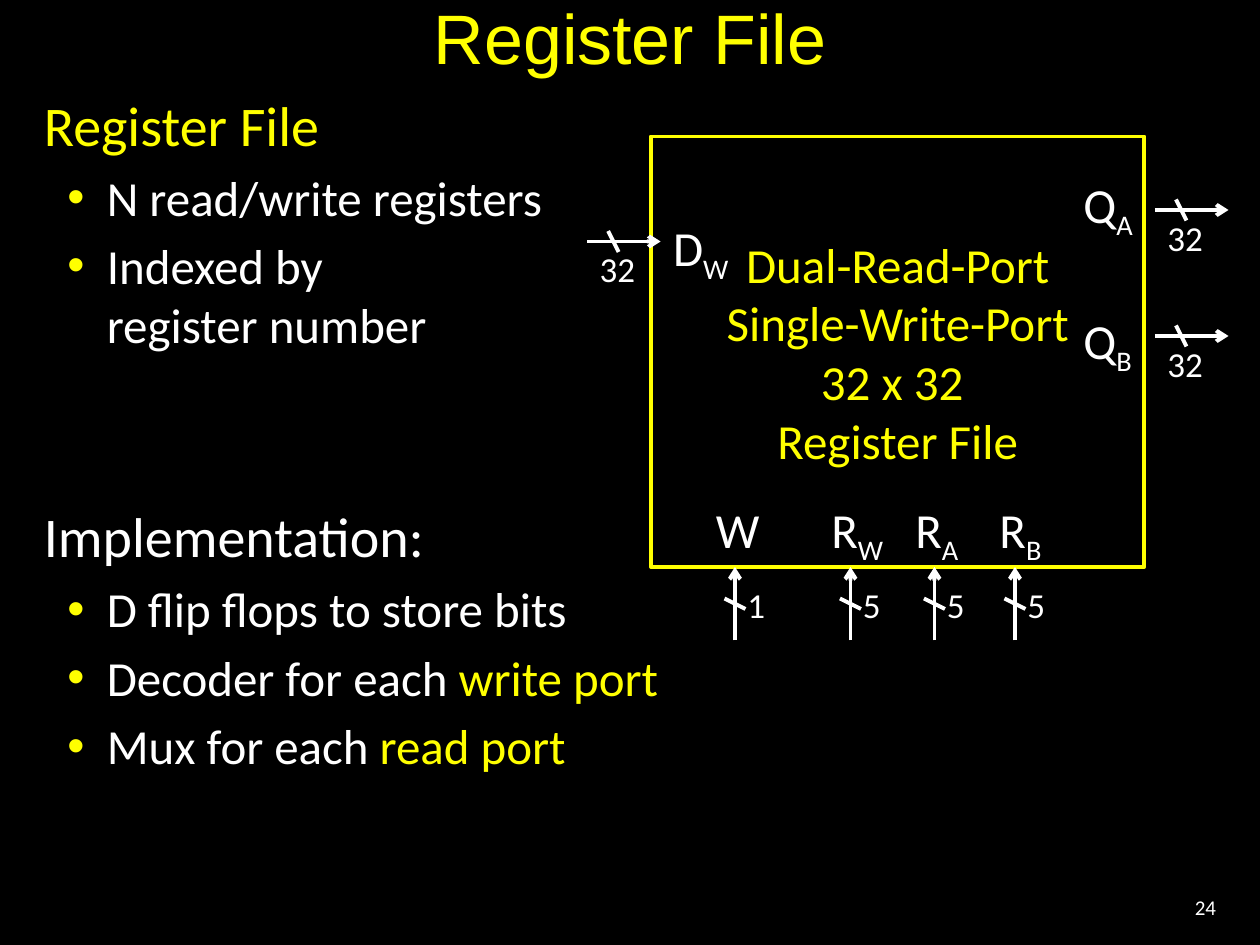
import pptx
import pptx.util
import pptx.dml.color
import pptx.enum.shapes
import pptx.enum.text
import pptx.oxml.ns
import lxml.etree

Pt = pptx.util.Pt
Align = pptx.enum.text.PP_ALIGN
Anchor = pptx.enum.text.MSO_ANCHOR
qn = pptx.oxml.ns.qn
YELLOW, WHITE, BLACK = "FFFF00", "FFFFFF", "000000"


def color(code):
    return pptx.dml.color.RGBColor.from_string(code)


def write(para, text, font="Calibri", size=28, fill=WHITE, base=0):
    for i, part in enumerate(text.split("\n")):
        if i:
            para.add_line_break()
        run = para.add_run()
        run.text = part
        run.font.name = font
        run.font.size = Pt(size)
        run.font.color.rgb = color(fill)
        if base:
            run.font._element.set("baseline", str(base * 1000))


def frame(slide, box, wrap=True, anchor=Anchor.TOP, align=Align.LEFT):
    area = slide.shapes.add_textbox(*map(Pt, box)).text_frame
    area.word_wrap = wrap
    area.vertical_anchor = anchor
    area.paragraphs[0].alignment = align
    return area


def bullet(para):
    props = para._p.get_or_add_pPr()
    props.set("marL", str(Pt(36)))
    props.set("indent", str(Pt(-22.5)))
    tint = lxml.etree.SubElement(props, qn("a:buClr"))
    lxml.etree.SubElement(tint, qn("a:srgbClr")).set("val", YELLOW)
    lxml.etree.SubElement(props, qn("a:buFont")).set("typeface", "Arial")
    lxml.etree.SubElement(props, qn("a:buChar")).set("char", "•")


def line(slide, x1, y1, x2, y2, arrow=False):
    kind = pptx.enum.shapes.MSO_CONNECTOR.STRAIGHT
    wire = slide.shapes.add_connector(kind, Pt(x1), Pt(y1), Pt(x2), Pt(y2))
    wire.line.color.rgb = color(WHITE)
    wire.line.width = Pt(2.25)
    if arrow:
        stroke = wire.line._get_or_add_ln()
        lxml.etree.SubElement(stroke, qn("a:tailEnd")).set("type", "arrow")
    lxml.etree.SubElement(wire._element.spPr, qn("a:effectLst"))


def title(slide, box):
    area = frame(slide, box, anchor=Anchor.MIDDLE, align=Align.CENTER)
    write(area.paragraphs[0], "Register File", font="Arial", size=40, fill=YELLOW)


def number(slide, box):
    area = frame(slide, box, anchor=Anchor.MIDDLE, align=Align.RIGHT)
    write(area.paragraphs[0], "24", size=12)


def notes(slide, box):
    area = frame(slide, box)
    groups = [
        ("Register File", YELLOW, 0,
         [("N read/write registers", ""), ("Indexed by \nregister number", "")]),
        ("Implementation:", WHITE, 85,
         [("D flip flops to store bits", ""),
          ("Decoder for each ", "write port"),
          ("Mux for each", " read port")]),
    ]
    for i, (head, fill, gap, items) in enumerate(groups):
        para = area.add_paragraph() if i else area.paragraphs[0]
        para.space_before = Pt(gap)
        write(para, head, size=32, fill=fill)
        for plain, key in items:
            para = area.add_paragraph()
            para.space_before = Pt(5.5)
            bullet(para)
            write(para, plain)
            if key:
                write(para, key, fill=YELLOW)


def label(slide, x, y, name, sub="", size=28):
    area = frame(slide, (x, y, 48, size * 1.5), wrap=False)
    write(area.paragraphs[0], name, size=size)
    if sub:
        write(area.paragraphs[0], sub, size=size, base=-25)


def across(slide, x, y):
    line(slide, x, y, x + 42, y, arrow=True)
    line(slide, x + 12, y - 6, x + 18, y + 6)
    label(slide, x, y, "32", size=20)


def upward(slide, x, y, bits):
    line(slide, x, y + 42, x, y, arrow=True)
    line(slide, x - 6, y + 18, x + 6, y + 24)
    label(slide, x, y + 6, bits, size=20)


def block(slide, box):
    left, top, width, height = box
    kind = pptx.enum.shapes.MSO_SHAPE.RECTANGLE
    body = slide.shapes.add_shape(kind, *map(Pt, box))
    body.shadow.inherit = False
    body.fill.background()
    body.line.color.rgb = color(YELLOW)
    body.line.width = Pt(2.25)
    area = body.text_frame
    area.word_wrap = True
    area.vertical_anchor = Anchor.MIDDLE
    for i, text in enumerate(["Dual-Read-Port\nSingle-Write-Port",
                              "32 x 32 \nRegister File"]):
        para = area.add_paragraph() if i else area.paragraphs[0]
        para.alignment = Align.CENTER
        write(para, text, fill=YELLOW)

    label(slide, left + 5.5, top + 43, "D", "W")
    across(slide, left - 36.5, top + 60)
    for sub, y, wire in [("A", 18, 42), ("B", 96, 114)]:
        label(slide, left + 240, top + y, "Q", sub)
        across(slide, left + width + 6, top + wire)
    for name, sub, x, wire, bits in [("W", "", 30, 48, "1"), ("R", "W", 96, 114, "5"),
                                     ("R", "A", 144, 162, "5"), ("R", "B", 192, 208, "5")]:
        label(slide, left + x, top + height - 42, name, sub)
        upward(slide, left + wire, top + height, bits)


def main():
    deck = pptx.Presentation()
    deck.slide_width, deck.slide_height = Pt(720), Pt(540)
    slide = deck.slides.add_slide(deck.slide_layouts[6])
    slide.background.fill.solid()
    slide.background.fill.fore_color.rgb = color(BLACK)
    number(slide, (642, 504, 60, 29))
    title(slide, (30, 0, 660, 42))
    notes(slide, (18, 48, 402, 486))
    block(slide, (372, 78, 282, 246))
    deck.save("out.pptx")


if __name__ == "__main__":
    main()
